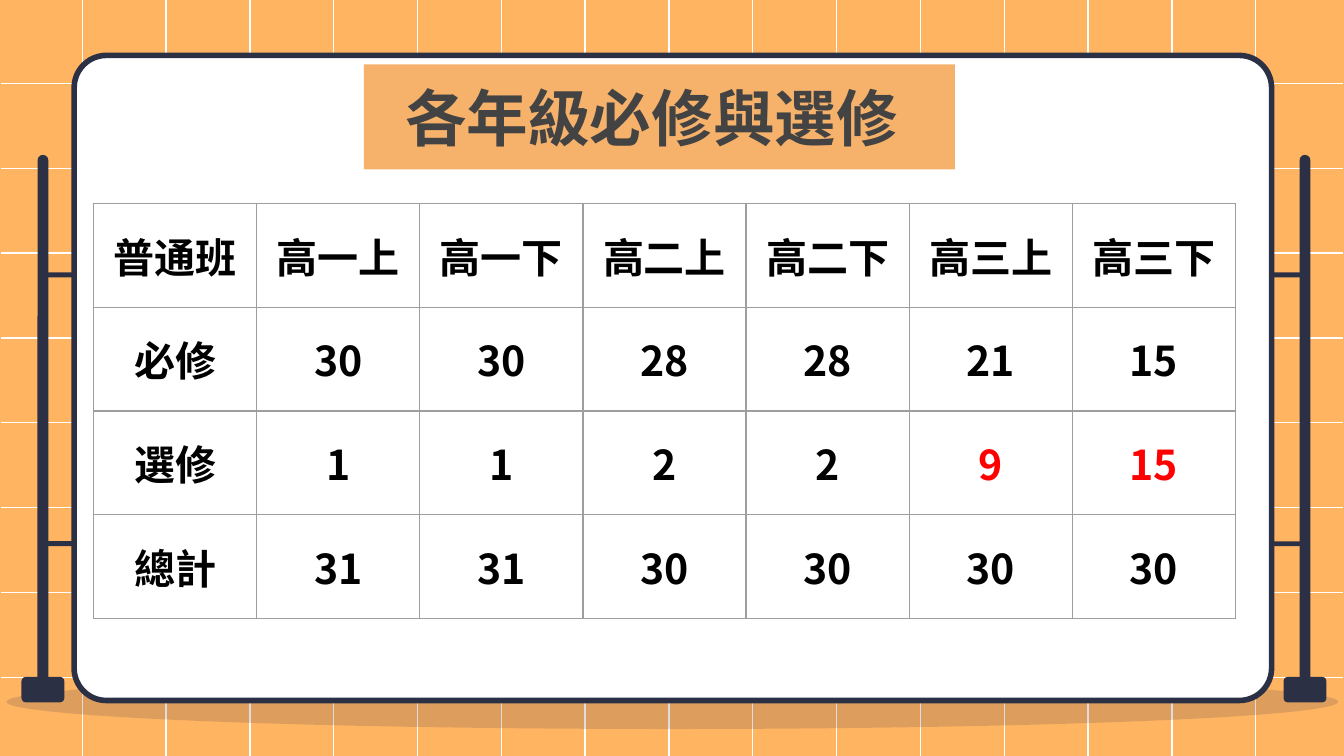
from dataclasses import dataclass

from lxml import etree
from pptx import Presentation
from pptx.dml.color import RGBColor
from pptx.enum import shapes, text
from pptx.oxml import ns
from pptx.util import Pt


@dataclass(frozen=True)
class Theme:
    font: str = "Noto Sans CJK TC"
    back: str = "FFB462"
    white: str = "FFFFFF"
    navy: str = "2C3045"
    band: str = "F6B26B"
    head: str = "434343"
    ink: str = "000000"
    mark: str = "FF0000"
    rule: str = "9E9E9E"
    title: float = 33
    cell: float = 22


THEME = Theme()
KIND = shapes.MSO_SHAPE
ROWS = [
    ["普通班", "高一上", "高一下", "高二上", "高二下", "高三上", "高三下"],
    ["必修", "30", "30", "28", "28", "21", "15"],
    ["選修", "1", "1", "2", "2", "9", "15"],
    ["總計", "31", "31", "30", "30", "30", "30"],
]
MARKED = {(2, 5), (2, 6)}


def rgb(code):
    return RGBColor.from_string(code)


def sub(node, tag, **attrs):
    return etree.SubElement(node, ns.qn(tag), **attrs)


def put_text(frame, words, size, color, align=text.PP_ALIGN.LEFT):
    para = frame.paragraphs[0]
    para.alignment = align
    run = para.add_run()
    run.text = words
    font = run.font
    font.name, font.size, font.bold = THEME.font, Pt(size), True
    font.color.rgb = rgb(color)
    sub(run.font._element, "a:ea", typeface=THEME.font)


def add_line(slide, x1, y1, x2, y2):
    line = slide.shapes.add_connector(
        shapes.MSO_CONNECTOR.STRAIGHT, Pt(x1), Pt(y1), Pt(x2), Pt(y2))
    line.line.color.rgb = rgb(THEME.white)
    line.line.width = Pt(0.75)
    sub(line.element.spPr, "a:effectLst")


def add_block(slide, kind, x, y, w, h, fill, round_by=None, edge=None, alpha=None):
    block = slide.shapes.add_shape(kind, Pt(x), Pt(y), Pt(w), Pt(h))
    block.shadow.inherit = False
    block.fill.solid()
    block.fill.fore_color.rgb = rgb(fill)
    if round_by is not None:
        block.adjustments[0] = round_by
    if edge:
        block.line.color.rgb = rgb(edge)
        block.line.width = Pt(3)
    else:
        block.line.fill.background()
    if alpha is not None:
        tint = block.element.spPr.find(ns.qn("a:solidFill"))[0]
        sub(tint, "a:alpha", val=str(alpha * 1000))


def add_grid(slide):
    for i in range(15):
        x = 44.1 + 44.9 * i
        add_line(slide, x, -0.7, x, 407.5)
    for i in range(8):
        y = 44.7 + 45.45 * i
        add_line(slide, 719.3, y, 0.7, y)


def add_board(slide):
    """Draw the whiteboard with its rails, posts, feet and floor shade."""
    bar, navy = KIND.ROUNDED_RECTANGLE, THEME.navy
    for y in (290, 146):
        add_block(slide, bar, 21.6, y, 678.2, 2.6, navy, 0.17)
    for mid in (699.1, 23):
        add_block(slide, bar, mid - 2.9, 83, 5.8, 283, navy, 0.5)
        add_block(slide, bar, mid - 11.5, 362.6, 23, 13.7, navy, 0.17)
    add_block(slide, KIND.OVAL, 3.4, 361.4, 713.5, 29.2, navy, alpha=16)
    add_block(slide, bar, 39.7, 29.7, 641.5, 345.6, THEME.white, 0.05, edge=navy)


def set_title(slide, words):
    title = slide.shapes.title
    title.left, title.top = Pt(195), Pt(34.5)
    title.width, title.height = Pt(316.6), Pt(56.2)
    title.fill.solid()
    title.fill.fore_color.rgb = rgb(THEME.band)
    frame = title.text_frame
    frame.auto_size = text.MSO_AUTO_SIZE.NONE
    frame.word_wrap = True
    frame.vertical_anchor = text.MSO_ANCHOR.MIDDLE
    frame.margin_top = frame.margin_bottom = frame.margin_right = Pt(7.2)
    frame.margin_left = Pt(22)
    put_text(frame, words, THEME.title, THEME.head)
    # Bring the title in front of the board.
    title.element.getparent().append(title.element)


def set_border(cell):
    props = cell._tc.get_or_add_tcPr()
    for side in ("L", "R", "T", "B"):
        line = sub(props, f"a:ln{side}", w=str(Pt(0.75)))
        fill = sub(line, "a:solidFill")
        sub(fill, "a:srgbClr", val=THEME.rule)


def add_hours(slide, rows):
    wide, high = 87.4, 55.6
    count = len(rows[0])
    table = slide.shapes.add_table(
        len(rows), count, Pt(50.1), Pt(109), Pt(wide * count), Pt(high * len(rows))).table
    table.first_row = table.horz_banding = False
    for col in table.columns:
        col.width = Pt(wide)
    for r, row in enumerate(rows):
        table.rows[r].height = Pt(high)
        for c, words in enumerate(row):
            cell = table.cell(r, c)
            cell.vertical_anchor = text.MSO_ANCHOR.MIDDLE
            cell.margin_left = cell.margin_right = Pt(7.2)
            cell.margin_top = cell.margin_bottom = Pt(7.2)
            set_border(cell)
            cell.fill.background()
            color = THEME.mark if (r, c) in MARKED else THEME.ink
            put_text(cell.text_frame, words, THEME.cell, color, text.PP_ALIGN.CENTER)


def main():
    deck = Presentation()
    deck.slide_width, deck.slide_height = Pt(720), Pt(405)
    slide = deck.slides.add_slide(deck.slide_layouts[5])
    slide.background.fill.solid()
    slide.background.fill.fore_color.rgb = rgb(THEME.back)
    add_grid(slide)
    add_board(slide)
    set_title(slide, "各年級必修與選修")
    add_hours(slide, ROWS)
    deck.save("out.pptx")


if __name__ == "__main__":
    main()
